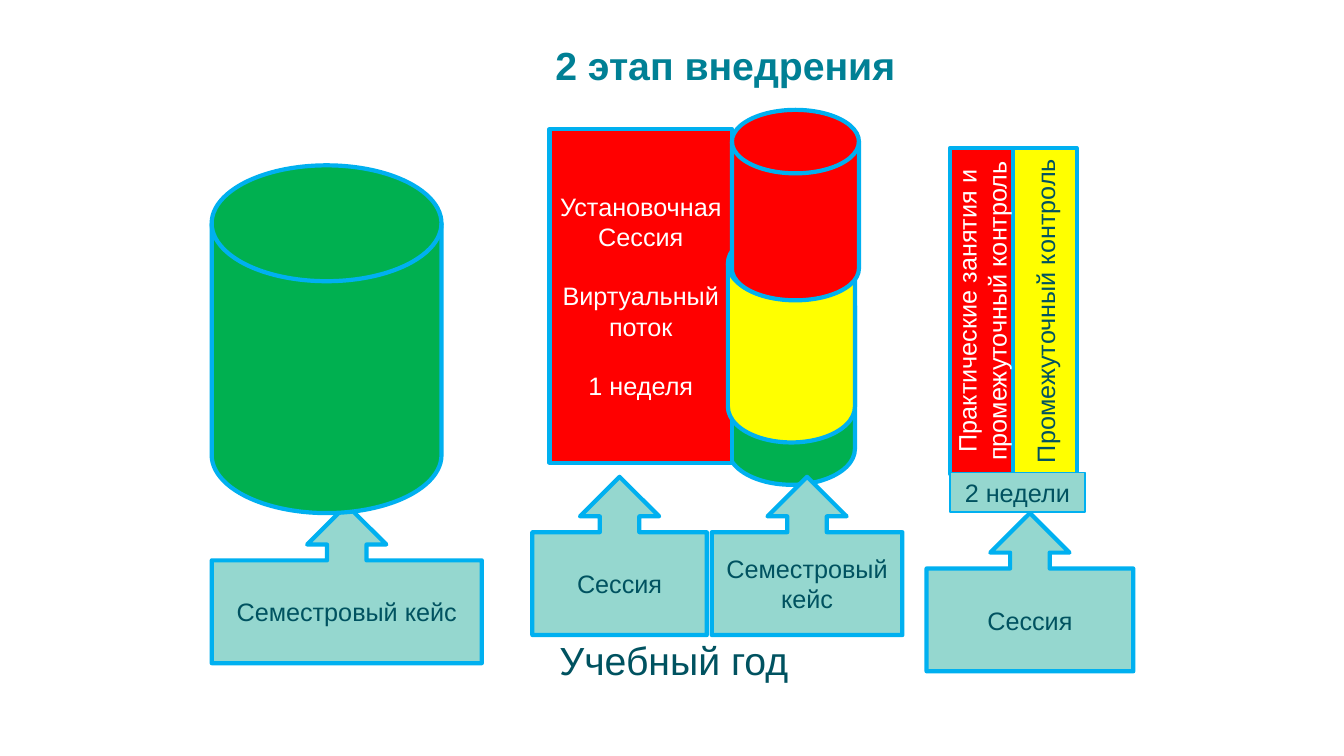
from pptx import Presentation
from pptx.dml.color import RGBColor
from pptx.enum.shapes import MSO_SHAPE as SHAPE
from pptx.enum.text import MSO_ANCHOR as ANCHOR, MSO_AUTO_SIZE as AUTOSIZE, PP_ALIGN as ALIGN
from pptx.util import Inches, Pt

GREEN, YELLOW, RED, MINT = "00B050", "FFFF00", "FF0000", "95D7CF"
BLUE, TEAL, INK, WHITE = "00B0F0", "008095", "005260", "FFFFFF"


def rgb(value):
    return RGBColor.from_string(value)


def write(tf, text, size=18, color=INK, bold=False, align=ALIGN.CENTER, gap=0):
    tf.word_wrap = True
    for i, line in enumerate(text.split("\n")):
        p = tf.add_paragraph() if i else tf.paragraphs[0]
        p.alignment = align
        if i and gap:
            p.space_before = Pt(gap)
        for j, part in enumerate(line.split("|")):
            if j:
                p = tf.add_paragraph()
                p.alignment = align
            r = p.add_run()
            r.text = part
            r.font.name = "Arial"
            r.font.size = Pt(size)
            r.font.bold = bold
            r.font.color.rgb = rgb(color)


class Deck:
    def __init__(self, width=13.33, height=7.5):
        self.prs = Presentation()
        self.prs.slide_width = Inches(width)
        self.prs.slide_height = Inches(height)
        self.s = self.prs.slides.add_slide(self.prs.slide_layouts[6])

    def place(self, x, y, w, h):
        col, row = self.prs.slide_width / 100, self.prs.slide_height / 100
        return round(x * col), round(y * row), round(w * col), round(h * row)

    def shape(self, kind, box, fill, text="", line=3, turn=0, **fmt):
        sp = self.s.shapes.add_shape(kind, *self.place(*box))
        sp.shadow.inherit = False
        sp.rotation = turn
        sp.fill.solid()
        sp.fill.fore_color.rgb = rgb(fill)
        sp.line.color.rgb = rgb(BLUE)
        sp.line.width = Pt(line)
        if text:
            sp.text_frame.vertical_anchor = ANCHOR.MIDDLE
            write(sp.text_frame, text, **fmt)

    def disk(self, x, y, fill, w=9.45, h=28.4):
        self.shape(SHAPE.FLOWCHART_MAGNETIC_DISK, (x, y, w, h), fill)

    def callout(self, x, y, w, text):
        self.shape(SHAPE.UP_ARROW_CALLOUT, (x, y, w, 20.93), MINT, text)

    def panel(self, box, fill, text, **fmt):
        self.shape(SHAPE.RECTANGLE, box, fill, text, **fmt)

    def label(self, x, y, w, text, **fmt):
        sp = self.s.shapes.add_textbox(*self.place(x, y, w, 7.6))
        write(sp.text_frame, text, size=28, align=ALIGN.LEFT, **fmt)
        sp.text_frame.auto_size = AUTOSIZE.SHAPE_TO_FIT_TEXT


def main():
    d = Deck()
    d.disk(54.16, 35.73, GREEN)
    d.label(40.58, 4.8, 27.16, "2 этап внедрения", color=TEAL, bold=True)
    d.callout(15.75, 66.8, 20.1, "Семестровый кейс")
    d.callout(68.94, 67.87, 15.38, "Сессия")
    d.callout(39.61, 63.07, 12.98, "Сессия")
    d.disk(15.75, 21.87, GREEN, w=17.1, h=46)
    d.panel((40.89, 17.07, 13.58, 44.13), RED,
            "Установочная|Сессия\nВиртуальный поток\n1 неделя", color=WHITE, gap=21)
    for x, fill, color, text in (
        (65.64, YELLOW, INK, "Промежуточный контроль"),
        (60.92, RED, WHITE, "Практические занятия и промежуточный контроль"),
    ):
        d.panel((x, 36.93, 24.23, 8.4), fill, text, turn=270, color=color)
    d.label(40.89, 83.47, 19.5, "Учебный год")
    d.disk(54.16, 30.13, YELLOW)
    d.disk(54.46, 14.53, RED, h=25.2)
    d.panel((70.67, 62.53, 10.05, 5.2), MINT, "2 недели", line=1)
    d.callout(52.96, 63.07, 14.18, "Семестровый кейс")
    d.prs.save("out.pptx")


if __name__ == "__main__":
    main()
